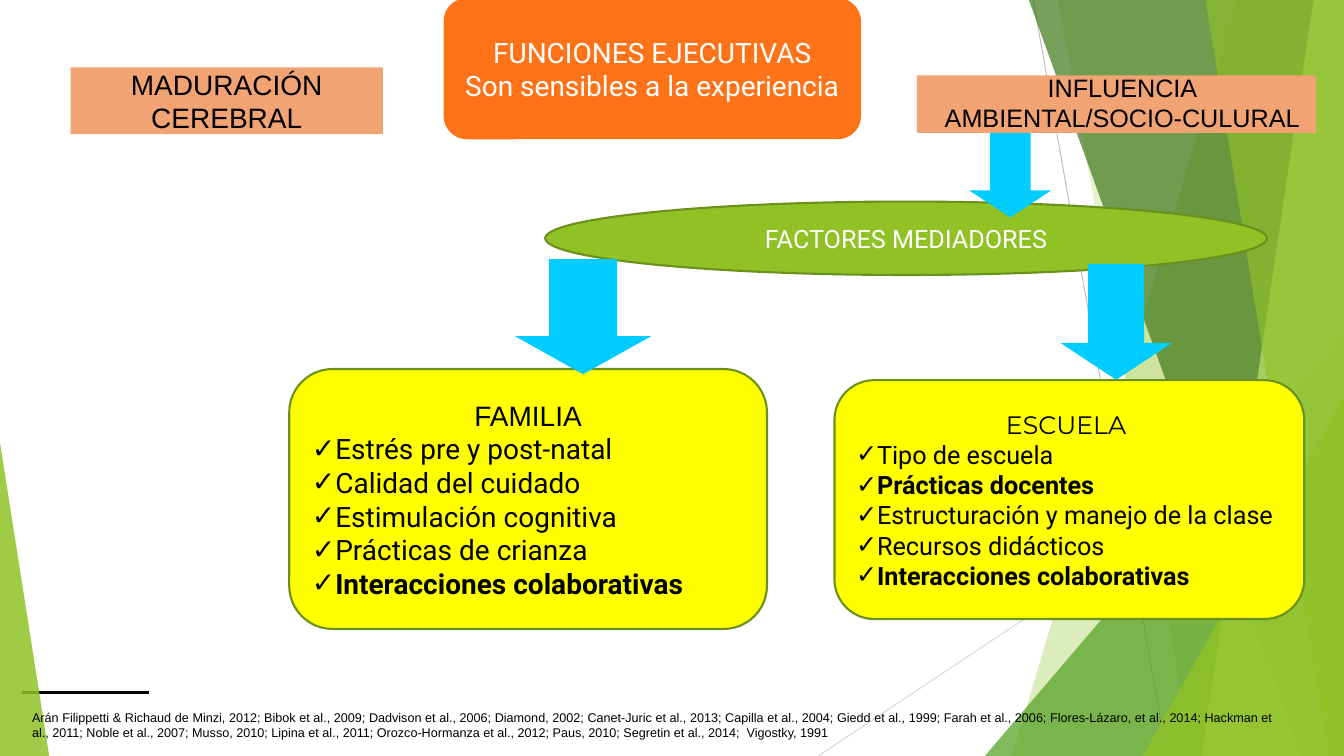
"""Slide on executive functions, their mediating factors, family and school."""
from lxml.etree import SubElement
from pptx import Presentation
from pptx.dml.color import RGBColor
from pptx.enum.shapes import MSO_CONNECTOR, MSO_SHAPE as SHAPE
from pptx.enum.text import MSO_ANCHOR, PP_ALIGN
from pptx.oxml.ns import qn
from pptx.util import Cm, Pt

COLORS = {
    "lime": "90C226", "leaf": "54A021", "forest": "3F7819", "pale": "C0E474",
    "outline": "6B901C", "peach": "F1A374", "orange": "FF7318",
    "yellow": "FFFF00", "sky": "00CCFF", "black": "000000", "white": "FFFFFF",
    "grey": "BFBFBF", "silver": "D9D9D9",
}
WIDTH, HEIGHT = 33.87, 19.05


def style(sp, fill, outline=None, opacity=100):
    sp.shadow.inherit = False
    sp.fill.solid()
    sp.fill.fore_color.rgb = RGBColor.from_string(COLORS[fill])
    if opacity < 100:
        color = sp.fill._xPr.find(qn("a:solidFill"))[0]
        SubElement(color, qn("a:alpha"), val=str(opacity * 1000))
    if outline:
        sp.line.color.rgb = RGBColor.from_string(COLORS[outline])
        sp.line.width = Pt(1.5)
    else:
        sp.line.fill.background()


def write(sp, lines, size, color, align=PP_ALIGN.CENTER, wrap=True, anchor=MSO_ANCHOR.MIDDLE):
    tf = sp.text_frame
    tf.word_wrap = wrap
    tf.vertical_anchor = anchor
    for i, (text, font, bullet, bold) in enumerate(lines):
        p = tf.paragraphs[0] if i == 0 else tf.add_paragraph()
        p.alignment = PP_ALIGN.LEFT if bullet else align
        if bullet:
            pPr = p._p.get_or_add_pPr()
            SubElement(pPr, qn("a:buFont"), typeface="Arial")
            SubElement(pPr, qn("a:buChar"), char="✓")
        r = p.add_run()
        r.text = text
        r.font.name, r.font.size, r.font.bold = font, Pt(size), bold
        r.font.color.rgb = RGBColor.from_string(COLORS[color])


prs = Presentation()
prs.slide_width, prs.slide_height = Cm(WIDTH), Cm(HEIGHT)
s = prs.slides.add_slide(prs.slide_layouts[6])

rules = [
    (26.04, 0, 29.41, HEIGHT, "grey", 0.75),
    (WIDTH, 10.24, 20.62, HEIGHT, "silver", 0.75),
    (0.56, 17.45, 3.76, 17.45, "black", 1.75),
]
for x1, y1, x2, y2, color, width in rules:
    line = s.shapes.add_connector(MSO_CONNECTOR.STRAIGHT, Cm(x1), Cm(y1), Cm(x2), Cm(y2))
    line.line.color.rgb = RGBColor.from_string(COLORS[color])
    line.line.width = Pt(width)
    SubElement(line._element.spPr, qn("a:effectLst"))

facets = [
    ("band", (31.19, 25.5), "lime", 30),
    ("band", (26.67, 30.05), "lime", 20),
    ("triangle", (24.82, 8.46, 9.05, 10.59, 1), "leaf", 72),
    ("band", (25.93, 32.79), "forest", 70),
    ("band", (33.1, 30.28), "pale", 70),
    ("band", (30.38, 33.48), "lime", 65),
    ("triangle", (28.8, 9.98, 5.07, 9.07, 1), "lime", 80),
    ("triangle", (0, 11.15, 1.24, 7.9, 0), "lime", 85),
]
for kind, geometry, color, opacity in facets:
    if kind == "band":
        top_x, bottom_x = geometry
        fb = s.shapes.build_freeform(Cm(top_x), Cm(0))
        corners = [(WIDTH, 0), (WIDTH, HEIGHT), (bottom_x, HEIGHT)]
        fb.add_line_segments([(Cm(x), Cm(y)) for x, y in corners], close=True)
        sp = fb.convert_to_shape()
    else:
        *box, apex = geometry
        sp = s.shapes.add_shape(SHAPE.ISOSCELES_TRIANGLE, *map(Cm, box))
        sp.adjustments[0] = apex
    style(sp, color, opacity=opacity)

brain = [(text, "Arial", False, False) for text in ("MADURACIÓN", "CEREBRAL")]
influence = [(text, "Arial", False, False) for text in ("INFLUENCIA ", "AMBIENTAL/SOCIO-CULURAL ")]
functions = [(text, "Roboto", False, False)
             for text in ("FUNCIONES EJECUTIVAS", "Son sensibles a la experiencia")]
family = [("FAMILIA", "Arial", False, False)] + [
    (text, "Roboto", True, text.startswith("Interacciones")) for text in (
        "Estrés pre y post-natal", "Calidad del cuidado", "Estimulación cognitiva",
        "Prácticas de crianza", "Interacciones colaborativas")]
school = [("ESCUELA ", "Montserrat", False, False)] + [
    (text, "Roboto", True, text in ("Prácticas docentes", "Interacciones colaborativas")) for text in (
        "Tipo de escuela", "Prácticas docentes", "Estructuración y manejo de la clase",
        "Recursos didácticos", "Interacciones colaborativas")]

boxes = [
    (SHAPE.RECTANGLE, (1.78, 1.7, 7.87, 1.68), "peach", None, brain, 20, "black"),
    (SHAPE.RECTANGLE, (23.11, 1.9, 10.06, 1.45), "peach", None, [], 18, "black"),
    (SHAPE.ROUNDED_RECTANGLE, (7.29, 9.3, 12.04, 6.55), "yellow", "outline", family, 20, "black"),
    (SHAPE.OVAL, (13.74, 5.08, 18.19, 1.85), "lime", "outline",
     [("FACTORES MEDIADORES", "Roboto", False, False)], 18, "white"),
    (SHAPE.ROUNDED_RECTANGLE, (21.03, 9.58, 11.84, 6.02), "yellow", "outline", school, 18, "black"),
    (SHAPE.ROUNDED_RECTANGLE, (11.18, -0.05, 10.52, 3.56), "orange", None, functions, 20, "white"),
]
for shape, box, fill, outline, lines, size, color in boxes:
    sp = s.shapes.add_shape(shape, *map(Cm, box))
    style(sp, fill, outline)
    write(sp, lines, size, color, wrap=lines is not brain)

arrows = [(12.98, 6.53, 3.43, 2.9), (26.72, 6.65, 2.82, 2.92), (24.43, 3.35, 2.06, 2.13)]
for box in arrows:
    sp = s.shapes.add_shape(SHAPE.DOWN_ARROW, *map(Cm, box))
    sp.adjustments[1] = 0.33
    style(sp, "sky")

tb = s.shapes.add_textbox(Cm(19.89), Cm(1.7), Cm(16.94), Cm(1.8))
write(tb, influence, 18, "black", anchor=MSO_ANCHOR.TOP)

references = (
    "Arán Filippetti & Richaud de Minzi, 2012; Bibok et al., 2009; Dadvison et al., 2006; "
    "Diamond, 2002; Canet-Juric et al., 2013; Capilla et al., 2004; Giedd et al., 1999; "
    "Farah et al., 2006; Flores-Lázaro, et al., 2014; Hackman et al., 2011; Noble et al., 2007; "
    "Musso, 2010; Lipina et al., 2011; Orozco-Hormanza et al., 2012; Paus, 2010; "
    "Segretin et al., 2014;  Vigostky, 1991")
tb = s.shapes.add_textbox(Cm(0.56), Cm(17.8), Cm(31.75), Cm(0.92))
write(tb, [(references, "Arial", False, False)], 9, "black", PP_ALIGN.JUSTIFY)

prs.save("out.pptx")
